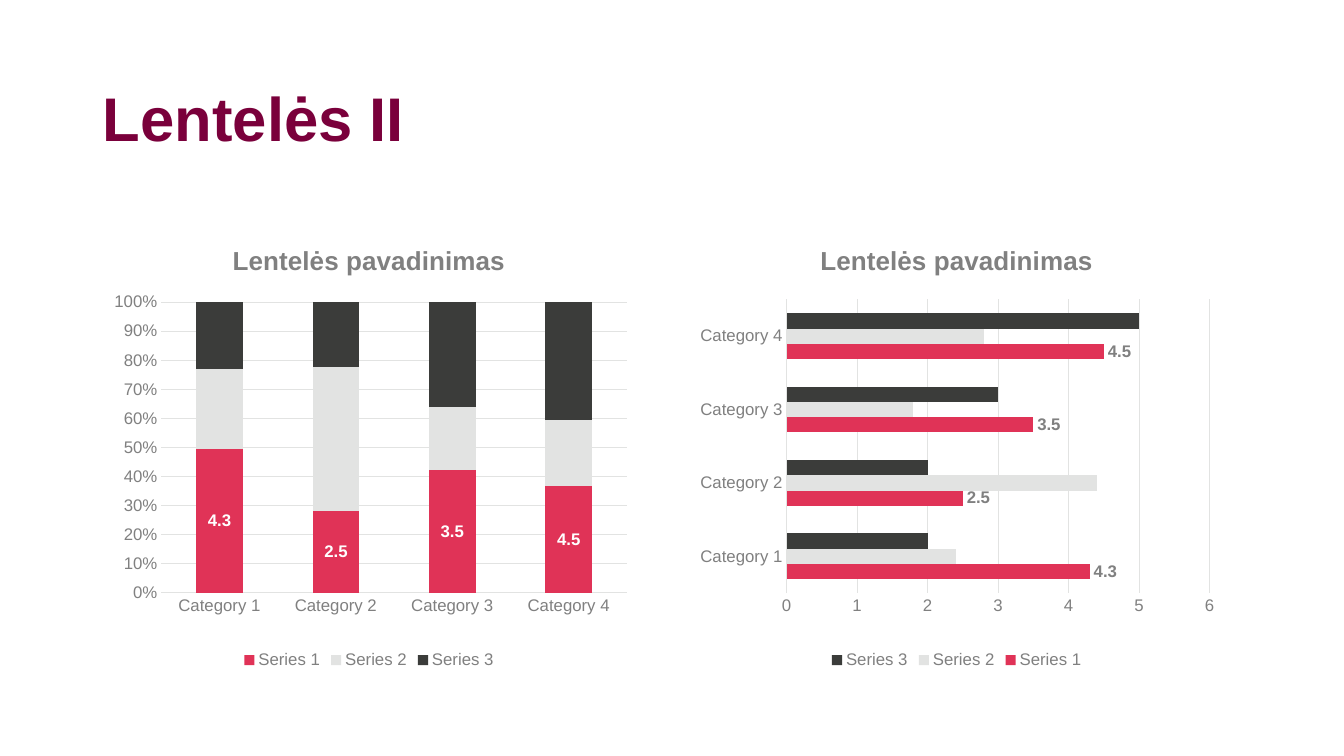
from dataclasses import dataclass
from typing import Optional

from lxml import etree
from pptx import Presentation
from pptx import util as u
from pptx.chart import chart as charts
from pptx.chart import data as chart_data
from pptx.dml import color
from pptx.enum import chart as ce
from pptx.enum import text
from pptx.oxml import ns

FONT = "Arial"
WINE, GREY, WHITE = "7A003B", "808080", "FFFFFF"
RED, PALE, DARK = "E03357", "E2E3E2", "3B3C3A"
CATEGORIES = [f"Category {number}" for number in range(1, 5)]


@dataclass(frozen=True)
class Series:
    name: str
    values: tuple[float, ...]
    fill: str


@dataclass(frozen=True)
class Panel:
    left: float
    kind: ce.XL_CHART_TYPE
    gap: int
    overlap: int
    plot_area: tuple[float, float, float, float]
    number_format: str
    maximum: Optional[float]
    unit: Optional[float]
    label_position: ce.XL_LABEL_POSITION
    label_color: str


SERIES = [
    Series("Series 1", (4.3, 2.5, 3.5, 4.5), RED),
    Series("Series 2", (2.4, 4.4, 1.8, 2.8), PALE),
    Series("Series 3", (2, 2, 3, 5), DARK),
]
PANELS = [
    Panel(2.34, ce.XL_CHART_TYPE.COLUMN_STACKED_100, 150, 100,
          (0.124, 0.173, 0.843, 0.648), "0%", None, None,
          ce.XL_LABEL_POSITION.CENTER, WHITE),
    Panel(17.15, ce.XL_CHART_TYPE.BAR_CLUSTERED, 182, 0,
          (0.192, 0.167, 0.766, 0.655), "General", 6, 1,
          ce.XL_LABEL_POSITION.OUTSIDE_END, GREY),
]


def rgb(value: str) -> color.RGBColor:
    return color.RGBColor.from_string(value)


def style_font(font: text, size: float, hex_color: str, bold: bool = False) -> None:
    font.name = FONT
    font.size = u.Pt(size)
    font.bold = bold
    font.color.rgb = rgb(hex_color)


def style_line(line, hex_color: str) -> None:
    line.color.rgb = rgb(hex_color)
    line.width = u.Pt(0.75)


def place_plot(chart: charts.Chart, area: tuple[float, float, float, float]) -> None:
    plot_area = chart.plots[0]._element.getparent()
    for old in plot_area.findall(ns.qn("c:layout")):
        plot_area.remove(old)
    layout = etree.Element(ns.qn("c:layout"))
    plot_area.insert(0, layout)
    manual = etree.SubElement(layout, ns.qn("c:manualLayout"))
    settings = [("layoutTarget", "inner"), ("xMode", "edge"), ("yMode", "edge")]
    settings += zip("xywh", map(str, area))
    for tag, value in settings:
        etree.SubElement(manual, ns.qn(f"c:{tag}")).set("val", value)


def style_axes(chart: charts.Chart, panel: Panel) -> None:
    for axis in (chart.category_axis, chart.value_axis):
        axis.major_tick_mark = ce.XL_TICK_MARK.NONE
        axis.minor_tick_mark = ce.XL_TICK_MARK.NONE
        style_font(axis.tick_labels.font, 12, GREY)
    style_line(chart.category_axis.format.line, PALE)
    value_axis = chart.value_axis
    value_axis.format.line.fill.background()
    value_axis.has_major_gridlines = True
    style_line(value_axis.major_gridlines.format.line, PALE)
    value_axis.tick_labels.number_format = panel.number_format
    value_axis.tick_labels.number_format_is_linked = False
    value_axis.minimum_scale = 0
    value_axis.maximum_scale = panel.maximum
    value_axis.major_unit = panel.unit


def add_panel(page, panel: Panel) -> None:
    data = chart_data.CategoryChartData()
    data.categories = CATEGORIES
    for series in SERIES:
        data.add_series(series.name, series.values)
    chart = page.shapes.add_chart(
        panel.kind, u.Cm(panel.left), u.Cm(5.66), u.Cm(13.92), u.Cm(11.3), data
    ).chart
    style_font(chart.font, 10, WINE)

    chart.has_title = True
    span = chart.chart_title.text_frame.paragraphs[0].add_run()
    span.text = "Lentelės pavadinimas"
    style_font(span.font, 18.6, GREY, True)
    chart.chart_title.include_in_layout = False

    chart.has_legend = True
    chart.legend.position = ce.XL_LEGEND_POSITION.BOTTOM
    chart.legend.include_in_layout = False
    style_font(chart.legend.font, 12, GREY)

    style_axes(chart, panel)
    place_plot(chart, panel.plot_area)
    plot = chart.plots[0]
    plot.gap_width = panel.gap
    plot.overlap = panel.overlap
    plot.vary_by_categories = False
    for bars, series in zip(plot.series, SERIES):
        bars.format.fill.solid()
        bars.format.fill.fore_color.rgb = rgb(series.fill)
        bars.invert_if_negative = False
    labels = plot.series[0].data_labels
    labels.show_value = True
    labels.position = panel.label_position
    style_font(labels.font, 12, panel.label_color, True)


def add_title(page) -> None:
    box = page.shapes.title
    box.left, box.top = u.Cm(2.34), u.Cm(1.98)
    box.width, box.height = u.Cm(24.82), u.Cm(3.68)
    frame = box.text_frame
    frame.word_wrap = True
    frame.auto_size = text.MSO_AUTO_SIZE.NONE
    frame.vertical_anchor = text.MSO_ANCHOR.TOP
    frame.margin_top = u.Cm(0.24)
    para = frame.paragraphs[0]
    para.alignment = text.PP_ALIGN.LEFT
    para.line_spacing = 0.9
    span = para.add_run()
    span.text = "Lentelės II"
    style_font(span.font, 44, WINE, True)


def main() -> None:
    deck = Presentation()
    deck.slide_width, deck.slide_height = u.Cm(33.87), u.Cm(19.05)
    page = deck.slides.add_slide(deck.slide_layouts.get_by_name("Title Only"))
    page.background.fill.solid()
    page.background.fill.fore_color.rgb = rgb(WHITE)
    add_title(page)
    for panel in PANELS:
        add_panel(page, panel)
    deck.save("out.pptx")


if __name__ == "__main__":
    main()
